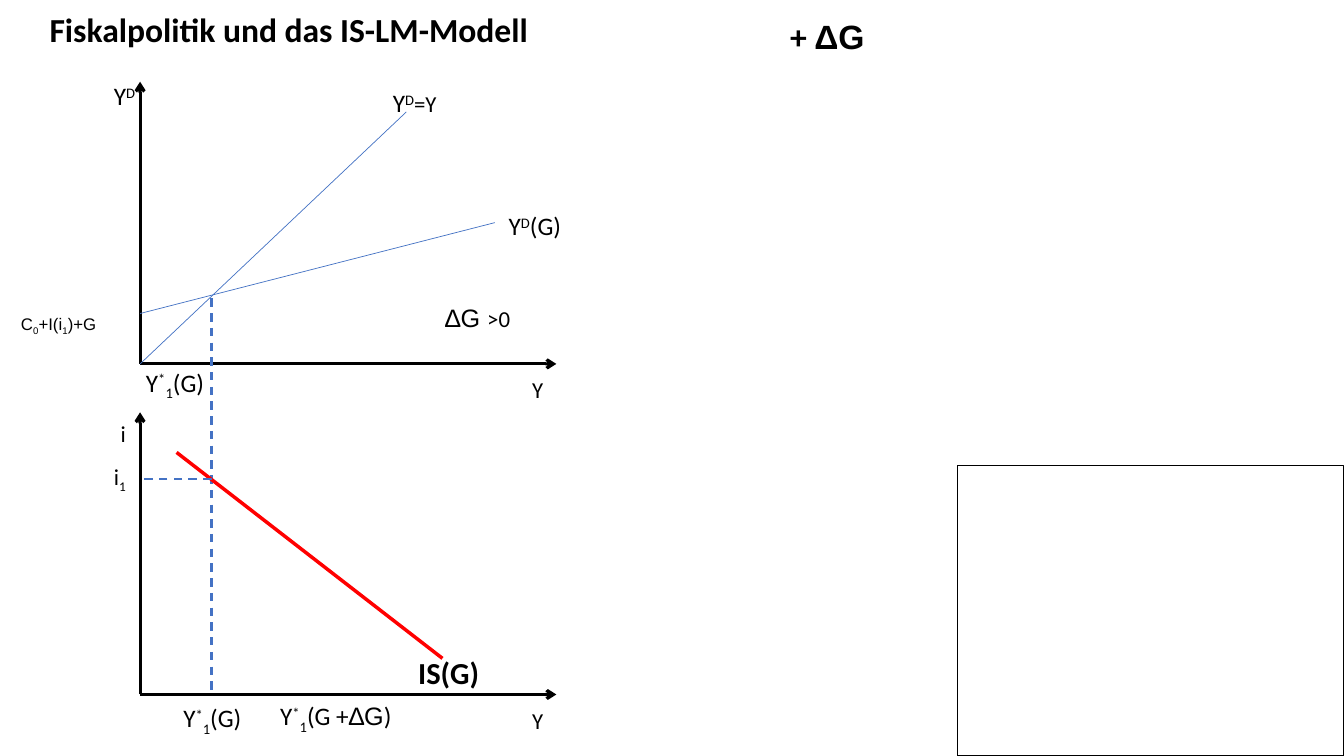
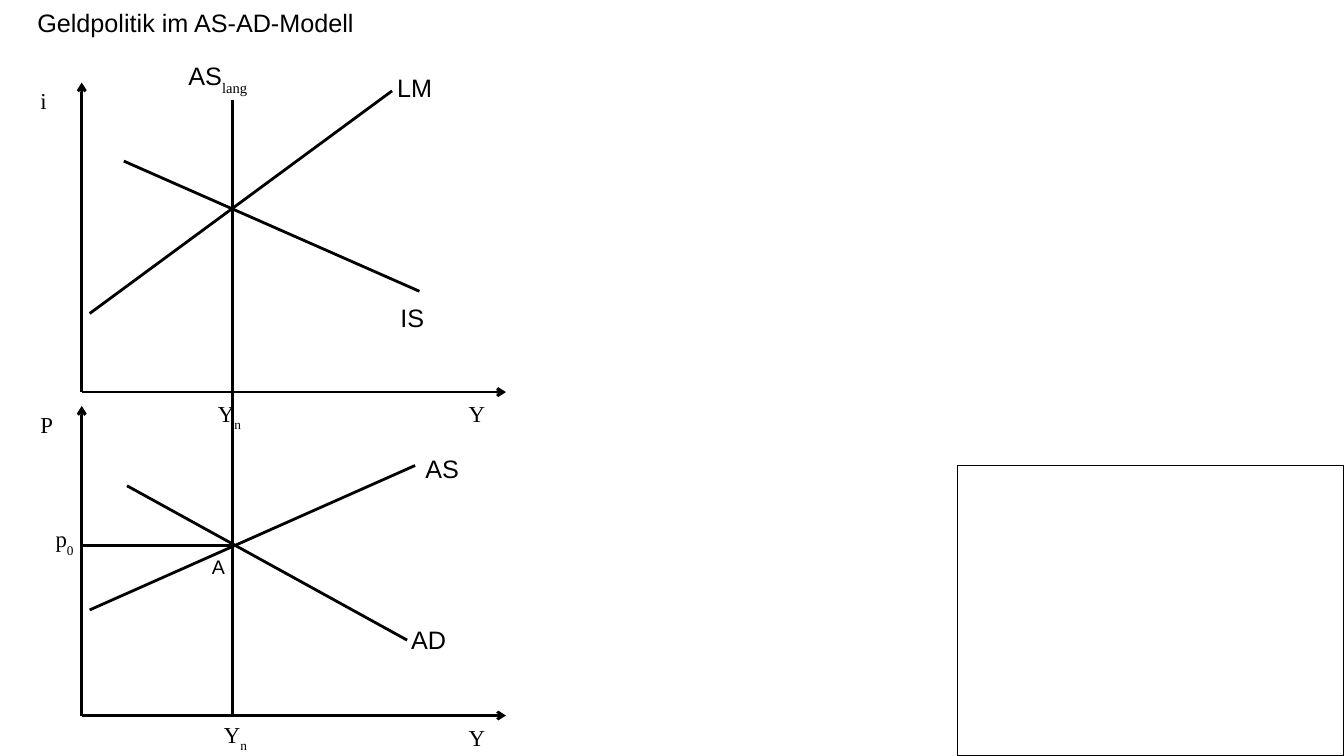
from lxml import etree
from pptx import Presentation
from pptx.dml.color import RGBColor
from pptx.enum.dml import MSO_LINE
from pptx.enum.shapes import MSO_CONNECTOR, MSO_SHAPE
from pptx.enum.text import MSO_ANCHOR, MSO_AUTO_SIZE, PP_ALIGN
from pptx.oxml.ns import qn
from pptx.util import Cm, Pt

COLORS = {"ink": "000000", "demand": "4472C4", "is_curve": "FF0000"}

# Text style: font, size in points, bold, box height in cm
TEXT = {
    "heading": ("Calibri", 24, True, 1.47),
    "plain_heading": ("Arial", 18, False, 0.97),
    "term": ("Calibri", 18, False, 1.02),
    "axis": ("Calibri", 16.3, False, 0.97),
    "is_name": ("Calibri", 21.8, True, 1.19),
    "intercept": ("Arial", 12, False, 1.07),
    "serif": ("Times New Roman", 16.3, False, 0.89),
    "curve": ("Arial", 18, False, 0.97),
    "point": ("Arial", 14, False, 0.81),
}

# Line style: colour, width in points, dashed, arrow at the end
LINES = {
    "bold_axis": ("ink", 2.25, False, True),
    "fine_axis": ("ink", 0, False, True),
    "demand": ("demand", 0.5, False, False),
    "guide": ("demand", 1.5, True, False),
    "is_curve": ("is_curve", 2.5, False, False),
    "hairline": ("ink", 0, False, False),
}

# Labels: style, left, top, width in cm, then the pieces of text.
# A piece starting with ^ is raised and one with _ lowered;
# a tuple gives a piece its own font and size.
EQUILIBRIUM = ["Y", "^*", "_1", "(G)"]
FISCAL = {
    "title": ("heading", 1.02, 0, 12.73, ["Fiskalpolitik und das IS-LM-Modell"]),
    "title_anchor": MSO_ANCHOR.MIDDLE,
    "insets": (0.25, 0.13),
    "lowered": -25,
    "axes": {"style": "bold_axis", "left": 3.53, "bases": (9.17, 17.5),
             "width": 10.49, "height": 7.11},
    "lines": [
        ("demand", (3.53, 9.17), (10.24, 2.82)),
        ("demand", (3.53, 7.9), (12.47, 5.61)),
        ("guide", (5.33, 7.52), (5.33, 17.42)),
        ("is_curve", (4.45, 11.4), (11.15, 16.59)),
        ("guide", (5.33, 12.07), (3.53, 12.07)),
    ],
    "labels": [
        ("heading", 19.66, 0.26, 6, ["+ ", ("ΔG", "Arial", 24)]),
        ("term", 12.57, 5.18, 1.88, ["Y", "^D", "(G)"]),
        ("term", 2.62, 1.9, 1.09, ["Y", "^D"]),
        ("axis", 13.16, 9.35, 0.79, ["Y"]),
        ("axis", 2.79, 10.44, 0.64, ["i"]),
        ("axis", 13.16, 17.68, 0.79, ["Y"]),
        ("axis", 2.62, 11.53, 0.84, ["i", "_1"]),
        ("is_name", 10.29, 16.36, 2.06, ["IS(G)"]),
        ("term", 10.97, 7.49, 2.16, [("∆G ", "Arial", 18), (">0", "Calibri", 16.3)]),
        ("term", 9.65, 2.08, 1.65, ["Y", "^D", ("=Y", "Calibri", 16.3)]),
        ("intercept", 0.28, 7.55, 2.64, ["C", "_0", "+I(i", "_1", ")+G"]),
        ("term", 4.37, 17.58, 2.06, EQUILIBRIUM),
        ("term", 6.81, 17.53, 3.4,
         ["Y", "^*", "_1", "(G +", ("∆G", "Arial", 18), ")"]),
        ("term", 3.43, 9.12, 2.06, EQUILIBRIUM),
    ],
}
MONETARY = {
    "title": ("plain_heading", 0.71, 0.08, 9.5, ["Geldpolitik im AS-AD-Modell"]),
    "title_anchor": MSO_ANCHOR.TOP,
    "insets": (0.23, 0.1),
    "lowered": -33,
    "axes": {"style": "fine_axis", "left": 2.06, "bases": (9.88, 18.03),
             "width": 10.69, "height": 7.8},
    "lines": [
        ("hairline", (3.12, 4.06), (10.57, 7.34)),
        ("hairline", (3.2, 12.24), (10.26, 16.13)),
        ("hairline", (2.26, 7.9), (9.88, 2.29)),
        ("hairline", (5.86, 2.51), (5.86, 18.03)),
        ("hairline", (5.86, 13.74), (2.06, 13.74)),
        ("hairline", (2.26, 15.37), (10.46, 11.73)),
    ],
    "labels": [
        ("serif", 0.79, 2.08, 0.61, ["i"]),
        ("serif", 11.58, 9.98, 0.89, ["Y"]),
        ("curve", 9.78, 1.73, 1.35, ["LM"]),
        ("serif", 5.26, 9.96, 1.07, ["Y", "_n"]),
        ("curve", 9.86, 7.52, 1.07, ["IS"]),
        ("serif", 0.79, 10.24, 0.79, ["P"]),
        ("serif", 11.58, 18.14, 0.89, ["Y"]),
        ("serif", 1.17, 13.13, 0.94, ["p", "_0"]),
        ("curve", 10.13, 15.62, 1.35, ["AD"]),
        ("curve", 10.49, 11.33, 1.32, ["AS"]),
        ("curve", 4.52, 1.42, 2.06, ["AS", ("_lang", "Times New Roman", 18)]),
        ("serif", 5.41, 18.06, 1.07, ["Y", "_n"]),
        ("point", 5.11, 13.89, 0.79, ["A"]),
    ],
}
FRAME = (24.13, 11.73, 9.73, 7.32)


def color(name):
    return RGBColor.from_string(COLORS[name])


def add_line(slide, style, start, end):
    color_name, width, dashed, arrow = LINES[style]
    line = slide.shapes.add_connector(
        MSO_CONNECTOR.STRAIGHT, *(Cm(value) for value in (*start, *end)))
    line.line.color.rgb = color(color_name)
    line.line.width = Pt(width)
    if dashed:
        line.line.dash_style = MSO_LINE.DASH
    if arrow:
        etree.SubElement(line.line._get_or_add_ln(), qn("a:tailEnd"), type="arrow")
    etree.SubElement(line._element.spPr, qn("a:effectLst"))


def add_axes(slide, style, left, bases, width, height):
    for base in bases:
        add_line(slide, style, (left, base), (left, base - height))
        add_line(slide, style, (left, base), (left + width, base))


def write(frame, style, pieces, insets, lowered):
    """Fill a text frame with runs, raising and lowering marked pieces."""
    font, size, bold, _ = TEXT[style]
    frame.margin_left = frame.margin_right = Cm(insets[0])
    frame.margin_top = frame.margin_bottom = Cm(insets[1])
    paragraph = frame.paragraphs[0]
    paragraph.alignment = PP_ALIGN.LEFT
    for piece in pieces:
        text, run_font, run_size = (
            (piece, font, size) if isinstance(piece, str) else piece)
        shift = {"^": 30, "_": lowered}.get(text[0])
        run = paragraph.add_run()
        run.text = text[1:] if shift else text
        run.font.name, run.font.size, run.font.bold = run_font, Pt(run_size), bold
        run.font.color.rgb = color("ink")
        if shift:
            run._r.get_or_add_rPr().set("baseline", str(shift * 1000))
    return paragraph


def add_label(slide, content, style, left, top, width, pieces):
    box = slide.shapes.add_textbox(Cm(left), Cm(top), Cm(width), Cm(TEXT[style][3]))
    frame = box.text_frame
    paragraph = write(frame, style, pieces, content["insets"], content["lowered"])
    if style == "intercept":
        frame.word_wrap = True
        paragraph.line_spacing = 1.4
    else:
        frame.word_wrap = False
        frame.auto_size = MSO_AUTO_SIZE.SHAPE_TO_FIT_TEXT


def set_title(slide, content):
    style, left, top, width, pieces = content["title"]
    title = slide.shapes.title
    title.left, title.top = Cm(left), Cm(top)
    title.width, title.height = Cm(width), Cm(TEXT[style][3])
    frame = title.text_frame
    frame.auto_size = MSO_AUTO_SIZE.NONE
    frame.vertical_anchor = content["title_anchor"]
    write(frame, style, pieces, (0.23, 0.1), content["lowered"])


def add_frame(slide):
    frame = slide.shapes.add_shape(MSO_SHAPE.RECTANGLE, *(Cm(v) for v in FRAME))
    frame.shadow.inherit = False
    frame.fill.background()
    frame.line.color.rgb = color("ink")
    frame.line.width = Pt(1)


def main():
    presentation = Presentation()
    presentation.slide_width, presentation.slide_height = Cm(33.87), Cm(19.05)
    title_only = presentation.slide_layouts[5]
    for content in (FISCAL, MONETARY):
        slide = presentation.slides.add_slide(title_only)
        set_title(slide, content)
        add_axes(slide, **content["axes"])
        for line in content["lines"]:
            add_line(slide, *line)
        for label in content["labels"]:
            add_label(slide, content, *label)
        add_frame(slide)
    presentation.save("out.pptx")


if __name__ == "__main__":
    main()
